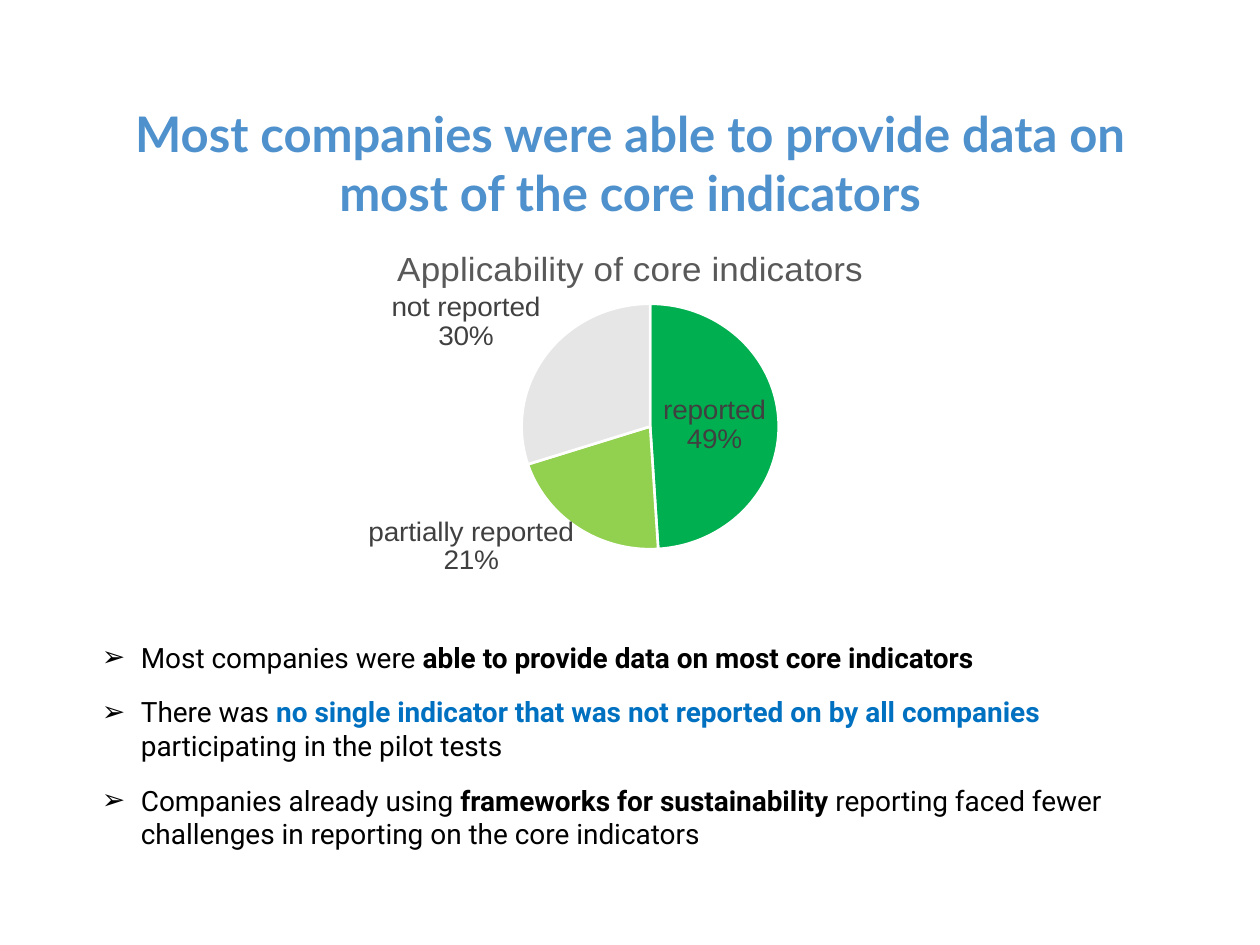
from dataclasses import dataclass

from lxml import etree
from pptx import Presentation
from pptx.chart.data import CategoryChartData
from pptx.dml.color import RGBColor
from pptx.enum.chart import XL_CHART_TYPE, XL_LABEL_POSITION
from pptx.enum.text import MSO_ANCHOR, PP_ALIGN
from pptx.oxml import parse_xml
from pptx.oxml.ns import nsdecls, qn
from pptx.util import Inches, Pt

PIE = XL_CHART_TYPE.PIE
MID, OUT = XL_LABEL_POSITION.CENTER, XL_LABEL_POSITION.OUTSIDE_END
CENTER = PP_ALIGN.CENTER
MIDDLE = MSO_ANCHOR.MIDDLE
WIDE, HIGH = 10, 7.5


@dataclass(frozen=True)
class Theme:
    head: str = "4F91CD"
    ink: str = "000000"
    mark: str = "0070C0"
    label: str = "404040"
    cap: str = "595959"
    edge: str = "FFFFFF"
    slices: tuple = ("00B050", "92D050", "E6E6E6")
    title: int = 28
    chart: int = 20
    body: int = 16
    small: int = 10


THEME = Theme()
HEAD = "Most companies were able to provide data on most of the core indicators"
SHARES = {"reported": 49, "partially reported": 21, "not reported": 30}
POINTS = [
    [("Most companies were ", False, THEME.ink),
     ("able to provide data on most core indicators", True, THEME.ink)],
    [("There was ", False, THEME.ink),
     ("no single indicator that was not reported on by all companies ", True, THEME.mark),
     ("participating in the pilot tests", False, THEME.ink)],
    [("Companies already using ", False, THEME.ink),
     ("frameworks for sustainability ", True, THEME.ink),
     ("reporting faced fewer challenges in reporting on the core indicators",
      False, THEME.ink)],
]


def place(left, top, width, height):
    return [Inches(WIDE * left), Inches(HIGH * top),
            Inches(WIDE * width), Inches(HIGH * height)]


def style(font, color, **form):
    for key, value in form.items():
        setattr(font, key, value)
    font.color.rgb = RGBColor.from_string(color)


def add_box(slide, area):
    frame = slide.shapes.add_textbox(*area).text_frame
    frame.word_wrap = True
    return frame


def add_run(para, text, color, **form):
    run = para.add_run()
    run.text = text
    style(run.font, color, **form)


def add_head(slide, area):
    frame = add_box(slide, area)
    frame.vertical_anchor = MIDDLE
    para = frame.paragraphs[0]
    para.alignment = CENTER
    add_run(para, HEAD, THEME.head, name="Lato", size=Pt(THEME.title), bold=True)


def set_bullet(para):
    props = para._p.get_or_add_pPr()
    indent = Inches(0.31)
    props.set("marL", str(indent))
    props.set("indent", str(-indent))
    etree.SubElement(props, qn("a:buFont")).set("typeface", "Arial")
    etree.SubElement(props, qn("a:buChar")).set("char", "➢")


def add_list(slide, area):
    frame = add_box(slide, area)
    for row, parts in enumerate(POINTS):
        para = frame.add_paragraph() if row else frame.paragraphs[0]
        para.space_before = Pt(6 if row else 0)
        para.space_after = Pt(6)
        set_bullet(para)
        for text, bold, color in parts:
            add_run(para, text, color, name="Roboto", size=Pt(THEME.body), bold=bold)


def set_plot(chart, **shares):
    parts = "".join(f'<c:{key} val="{value}"/>' for key, value in shares.items())
    layout = parse_xml(
        f'<c:layout {nsdecls("c")}><c:manualLayout><c:layoutTarget val="inner"/>'
        f'<c:xMode val="edge"/><c:yMode val="edge"/>{parts}'
        '</c:manualLayout></c:layout>')
    area = chart._chartSpace.chart.plotArea
    for old in area.findall(qn("c:layout")):
        area.remove(old)
    area.insert(0, layout)


def set_labels(series):
    labels = series.data_labels
    first = series.points[0].data_label
    for item, spot in ((labels, OUT), (first, MID)):
        item.position = spot
        style(item.font, THEME.label, name="Arial", size=Pt(THEME.body))
    root = labels._element
    for tag, value in (("showVal", 0), ("showCatName", 1), ("showPercent", 1)):
        for node in root.iter(qn(f"c:{tag}")):
            node.set("val", str(value))
    for node in list(root.iter(qn("c:showBubbleSize"))):
        node.addnext(parse_xml(f'<c:separator {nsdecls("c")}>\n</c:separator>'))


def add_pie(slide, area):
    data = CategoryChartData()
    data.categories = list(SHARES)
    data.add_series("Series 1", list(SHARES.values()))
    chart = slide.shapes.add_chart(PIE, *area, data).chart
    style(chart.font, THEME.ink, name="Arial", size=Pt(THEME.small))
    chart.has_legend = False
    chart.has_title = True
    add_run(chart.chart_title.text_frame.paragraphs[0],
            "Applicability of core indicators", THEME.cap,
            name="Arial", size=Pt(THEME.chart), bold=False)
    set_plot(chart, x=0.222, y=0.219, w=0.594, h=0.707)
    series = chart.plots[0].series[0]
    for spot, color in enumerate(THEME.slices):
        form = series.points[spot].format
        form.fill.solid()
        form.fill.fore_color.rgb = RGBColor.from_string(color)
        form.line.color.rgb = RGBColor.from_string(THEME.edge)
        form.line.width = Pt(1.5)
    set_labels(series)


def main():
    deck = Presentation()
    deck.slide_width, deck.slide_height = Inches(WIDE), Inches(HIGH)
    slide = deck.slides.add_slide(deck.slide_layouts[6])
    add_head(slide, place(0.071, 0.124, 0.858, 0.095))
    add_pie(slide, place(0.091, 0.241, 0.819, 0.385))
    add_list(slide, place(0.071, 0.671, 0.858, 0.237))
    deck.save("out.pptx")


if __name__ == "__main__":
    main()
